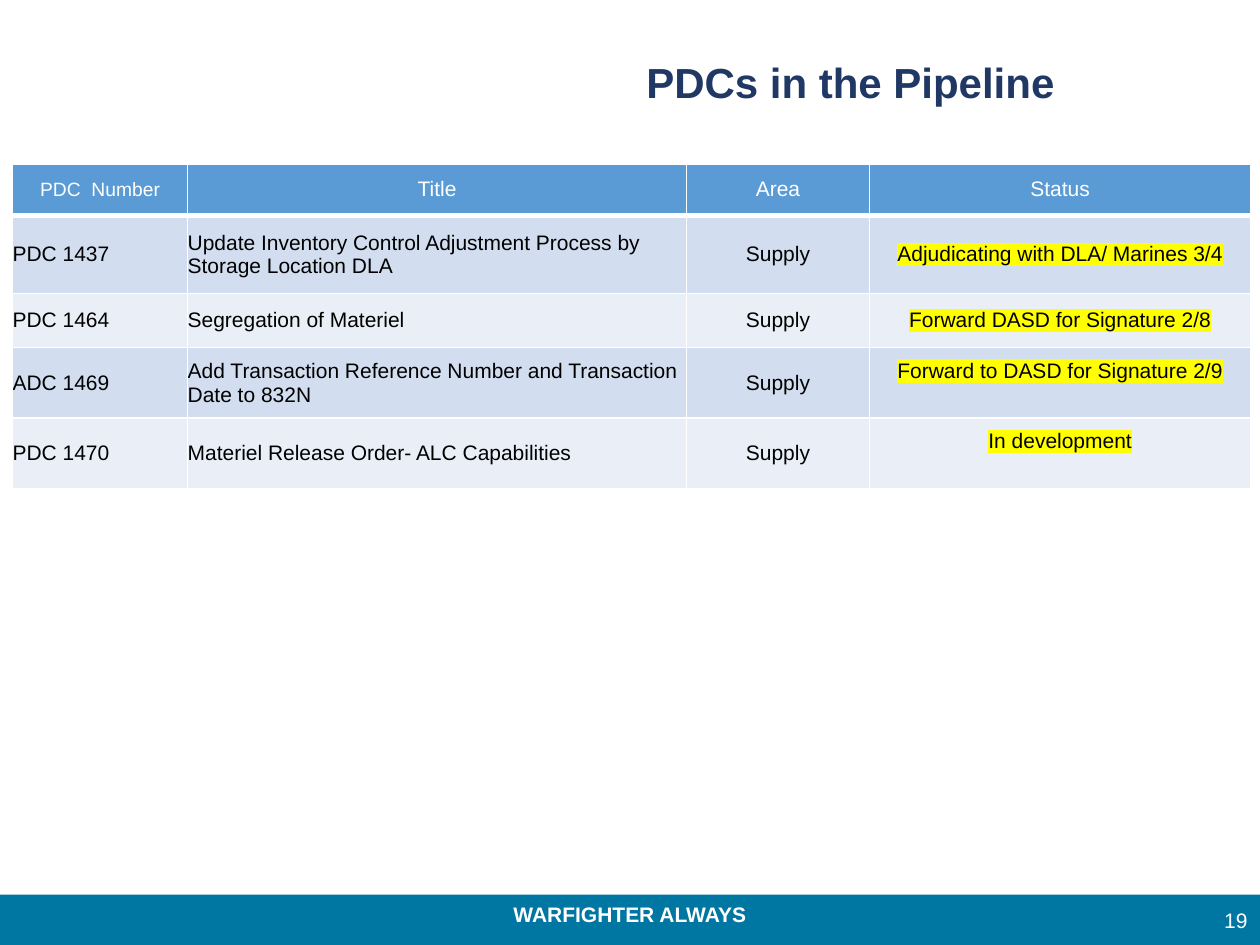
from dataclasses import astuple, dataclass

import lxml.etree
import pptx
import pptx.dml.color
import pptx.enum.shapes
import pptx.enum.text
import pptx.oxml.ns
import pptx.util

Inches = pptx.util.Inches
ALIGN = pptx.enum.text.PP_ALIGN
ANCHOR = pptx.enum.text.MSO_ANCHOR
qn = pptx.oxml.ns.qn

COLORS = {
    "white": "FFFFFF", "black": "000000", "navy": "203864", "footer": "0076A3",
    "header": "5B9BD5", "band_dark": "D2DEEF", "band_light": "EAEFF7",
    "highlight": "FFFF00",
}
FONT = "Arial"
COLUMN_WIDTHS = (1.39, 3.96, 1.45, 3.03)
ROW_HEIGHTS = (0.41, 0.62, 0.43, 0.56, 0.56)


@dataclass
class Change:
    number: str
    title: str
    area: str
    status: str


@dataclass
class Label:
    text: str
    box: tuple[float, float, float, float]
    size: int
    color: str
    bold: bool
    align: ALIGN
    anchor: ANCHOR


HEADER = Change("PDC  Number", "Title", "Area", "Status")
CHANGES = [
    Change("PDC 1437", "Update Inventory Control Adjustment Process by Storage Location DLA",
           "Supply", "Adjudicating with DLA/ Marines 3/4"),
    Change("PDC 1464", "Segregation of Materiel", "Supply", "Forward DASD for Signature 2/8"),
    Change("ADC 1469", "Add Transaction Reference Number and Transaction Date to 832N",
           "Supply", "Forward to DASD for Signature 2/9"),
    Change("PDC 1470", "Materiel Release Order- ALC Capabilities", "Supply", "In development"),
]
RAISED_STATUS_ROWS = (3, 4)
LABELS = [
    Label("WARFIGHTER ALWAYS", (0, 7.11, 10, 0.3), 12, "white", True, ALIGN.CENTER, ANCHOR.TOP),
    Label("PDCs in the Pipeline", (4, 0.4, 5.5, 0.9), 24, "navy", True, ALIGN.CENTER, ANCHOR.TOP),
    Label("19", (9.5, 7.1, 0.5, 0.4), 12, "white", False, ALIGN.RIGHT, ANCHOR.MIDDLE),
]


def rgb(name: str) -> pptx.dml.color.RGBColor:
    return pptx.dml.color.RGBColor.from_string(COLORS[name])


def write(tf, text: str, size: int, color: str, bold: bool, align: ALIGN):
    """Fill the frame with one formatted paragraph and return its run."""
    tf.text = text
    p = tf.paragraphs[0]
    p.alignment = align
    r = p.runs[0]
    r.font.size = pptx.util.Pt(size)
    r.font.bold = bold
    r.font.name = FONT
    r.font.color.rgb = rgb(color)
    return r


def add_label(slide, label: Label) -> None:
    tf = slide.shapes.add_textbox(*map(Inches, label.box)).text_frame
    tf.word_wrap = True
    tf.vertical_anchor = label.anchor
    write(tf, label.text, label.size, label.color, label.bold, label.align)


def highlight(r) -> None:
    mark = lxml.etree.Element(qn("a:highlight"))
    lxml.etree.SubElement(mark, qn("a:srgbClr"), val=COLORS["highlight"])
    r.font._element.find(qn("a:solidFill")).addnext(mark)


def set_borders(cell, bottom: float, top: float) -> None:
    """Draw white borders, one point wide at the sides."""
    tcPr = cell._tc.get_or_add_tcPr()
    widths = {"a:lnL": 1, "a:lnR": 1, "a:lnT": top, "a:lnB": bottom}
    for i, (tag, width) in enumerate(widths.items()):
        ln = lxml.etree.Element(qn(tag), w=str(pptx.util.Pt(width)))
        fill = lxml.etree.SubElement(ln, qn("a:solidFill"))
        lxml.etree.SubElement(fill, qn("a:srgbClr"), val=COLORS["white"])
        tcPr.insert(i, ln)


def fill_cell(cell, text: str, row: int, col: int) -> None:
    is_header, is_status = row == 0, col == 3
    cell.margin_left = cell.margin_right = cell.margin_top = cell.margin_bottom = 0
    if is_status and row in RAISED_STATUS_ROWS:
        cell.margin_bottom = Inches(0.19)
    cell.vertical_anchor = ANCHOR.MIDDLE
    cell.fill.solid()
    band = "band_dark" if row % 2 else "band_light"
    cell.fill.fore_color.rgb = rgb("header" if is_header else band)
    set_borders(cell, bottom=3 if is_header else 1, top=3 if row == 1 else 1)
    r = write(cell.text_frame, text, 11 if is_header and col == 0 else 12,
              "white" if is_header else "black", False,
              ALIGN.CENTER if is_header or col >= 2 else ALIGN.LEFT)
    if is_status and not is_header:
        highlight(r)


def add_change_table(slide) -> None:
    table = slide.shapes.add_table(
        len(ROW_HEIGHTS), len(COLUMN_WIDTHS), Inches(0.1), Inches(1.3),
        Inches(sum(COLUMN_WIDTHS)), Inches(sum(ROW_HEIGHTS))).table
    for column, width in zip(table.columns, COLUMN_WIDTHS):
        column.width = Inches(width)
    for row, height in zip(table.rows, ROW_HEIGHTS):
        row.height = Inches(height)
    for i, change in enumerate([HEADER, *CHANGES]):
        for j, text in enumerate(astuple(change)):
            fill_cell(table.cell(i, j), text, i, j)


def main() -> None:
    prs = pptx.Presentation()
    prs.slide_width, prs.slide_height = Inches(10), Inches(7.5)
    slide = prs.slides.add_slide(prs.slide_layouts[6])
    footer = slide.shapes.add_shape(pptx.enum.shapes.MSO_SHAPE.RECTANGLE,
                                    *map(Inches, (0, 7.1, 10, 0.4)))
    footer.shadow.inherit = False
    footer.fill.solid()
    footer.fill.fore_color.rgb = rgb("footer")
    footer.line.fill.background()
    for label in LABELS:
        add_label(slide, label)
    add_change_table(slide)
    prs.save("out.pptx")


if __name__ == "__main__":
    main()
